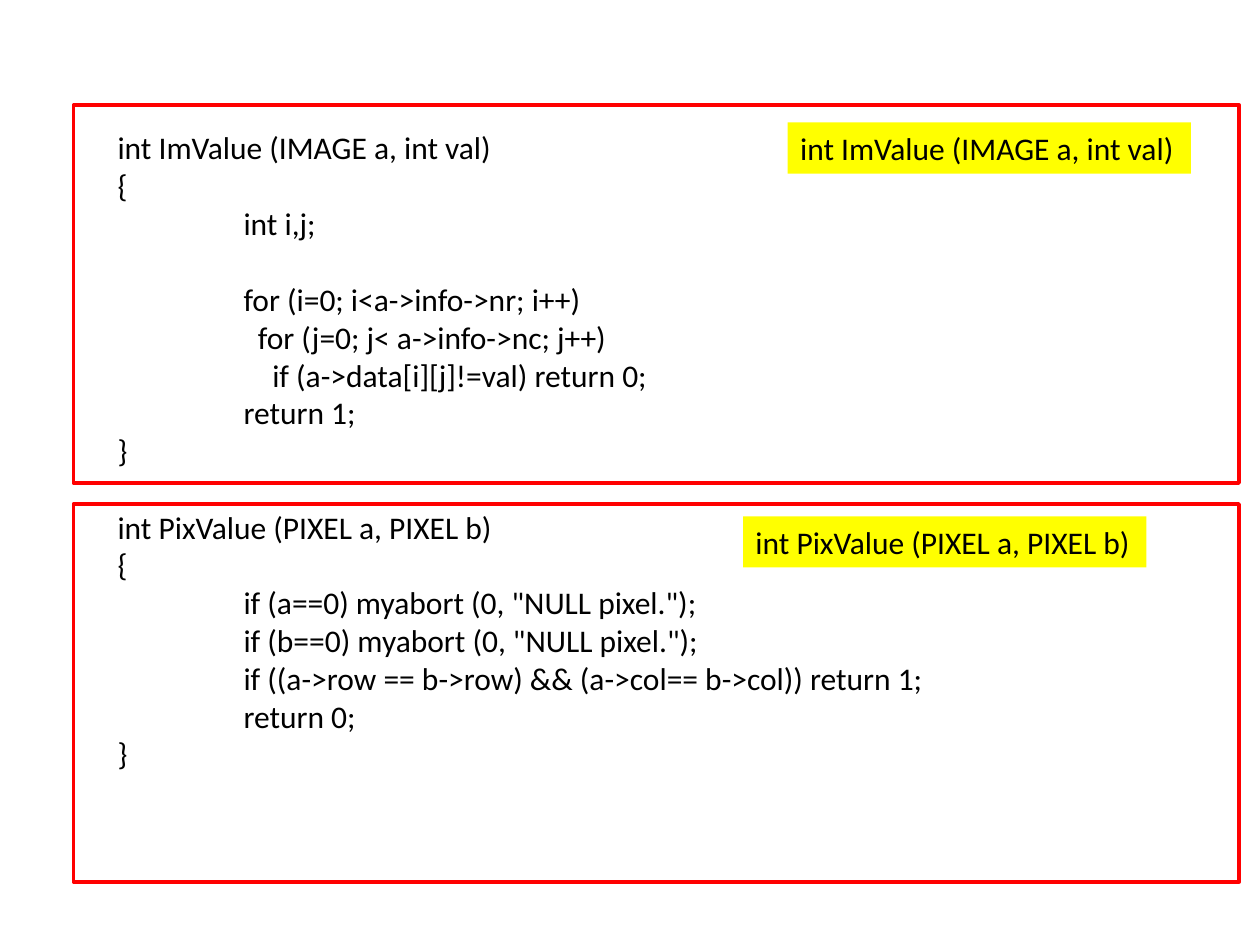
from pptx import Presentation
from pptx.dml.color import RGBColor
from pptx.enum.shapes import MSO_SHAPE
from pptx.enum.text import MSO_ANCHOR, MSO_AUTO_SIZE, PP_ALIGN
from pptx.util import Cm, Pt

RECTANGLE = MSO_SHAPE.RECTANGLE
TOP = MSO_ANCHOR.TOP
LEFT = PP_ALIGN.LEFT
FIT_SHAPE = MSO_AUTO_SIZE.SHAPE_TO_FIT_TEXT

BLACK = RGBColor(0x00, 0x00, 0x00)
RED = RGBColor(0xFF, 0x00, 0x00)
YELLOW = RGBColor(0xFF, 0xFF, 0x00)

FONT = "Calibri"
FONT_SIZE = Pt(18)
BLANK_LINE = Pt(22)
BODY_INDENT = Cm(2.54)
NESTING_STEP = Cm(0.29)

IM_SIGNATURE = "int ImValue (IMAGE a, int val)"
PIX_SIGNATURE = "int PixValue (PIXEL a, PIXEL b)"

# Each line: nesting inside the body (None = outside it), text, gap above
CODE = [
    (None, IM_SIGNATURE, False),
    (None, "{", False),
    (0, "int i,j;", False),
    (0, "for (i=0; i<a->info->nr; i++)", True),
    (1, "for (j=0; j< a->info->nc; j++)", False),
    (2, "if (a->data[i][j]!=val) return 0;", False),
    (0, "return 1;", False),
    (None, "}", False),
    (None, PIX_SIGNATURE, True),
    (None, "{", False),
    (0, 'if (a==0) myabort (0, "NULL pixel.");', False),
    (0, 'if (b==0) myabort (0, "NULL pixel.");', False),
    (0, "if ((a->row == b->row) && (a->col== b->col)) return 1;", False),
    (0, "return 0;", False),
    (None, "}", False),
]


def write_line(paragraph, text):
    paragraph.text = text
    paragraph.alignment = LEFT
    font = paragraph.runs[0].font
    font.name, font.size = FONT, FONT_SIZE
    font.color.rgb = BLACK


def add_code(slide, left, top, width, height):
    frame = slide.shapes.add_textbox(left, top, width, height).text_frame
    frame.word_wrap = True
    frame.auto_size = FIT_SHAPE
    for index, (nesting, text, gap_above) in enumerate(CODE):
        paragraph = frame.add_paragraph() if index else frame.paragraphs[0]
        write_line(paragraph, text)
        if gap_above:
            paragraph.space_before = BLANK_LINE
        if nesting is not None:
            properties = paragraph._p.get_or_add_pPr()
            properties.set("marL", str(BODY_INDENT + nesting * NESTING_STEP))
            properties.set("indent", "0")


def add_rectangle(slide, left, top, width, height):
    rectangle = slide.shapes.add_shape(RECTANGLE, left, top, width, height)
    rectangle.shadow.inherit = False
    return rectangle


def add_panel(slide, left, top, width, height, signature, label_dx, label_dy):
    """Red outline around one function, with its signature highlighted."""
    label = add_rectangle(slide, left + label_dx, top + label_dy,
                          Cm(8.13), Cm(1.03))
    label.fill.solid()
    label.fill.fore_color.rgb = YELLOW
    label.line.fill.background()
    frame = label.text_frame
    frame.word_wrap = False
    frame.auto_size = FIT_SHAPE
    frame.vertical_anchor = TOP
    write_line(frame.paragraphs[0], signature)

    outline = add_rectangle(slide, left, top, width, height)
    outline.fill.background()
    outline.line.color.rgb = RED
    outline.line.width = Pt(2)


def main():
    presentation = Presentation()
    presentation.slide_width = Cm(25.4)
    presentation.slide_height = Cm(19.05)
    slide = presentation.slides.add_slide(presentation.slide_layouts[6])

    add_code(slide, Cm(2.12), Cm(2.46), Cm(16.93), Cm(13.34))
    panel_left, panel_width, panel_height = Cm(1.48), Cm(23.5), Cm(7.62)
    add_panel(slide, panel_left, Cm(2.12), panel_width, panel_height,
              IM_SIGNATURE, Cm(14.4), Cm(0.35))
    add_panel(slide, panel_left, Cm(10.16), panel_width, panel_height,
              PIX_SIGNATURE, Cm(13.5), Cm(0.25))
    presentation.save("out.pptx")


if __name__ == "__main__":
    main()
